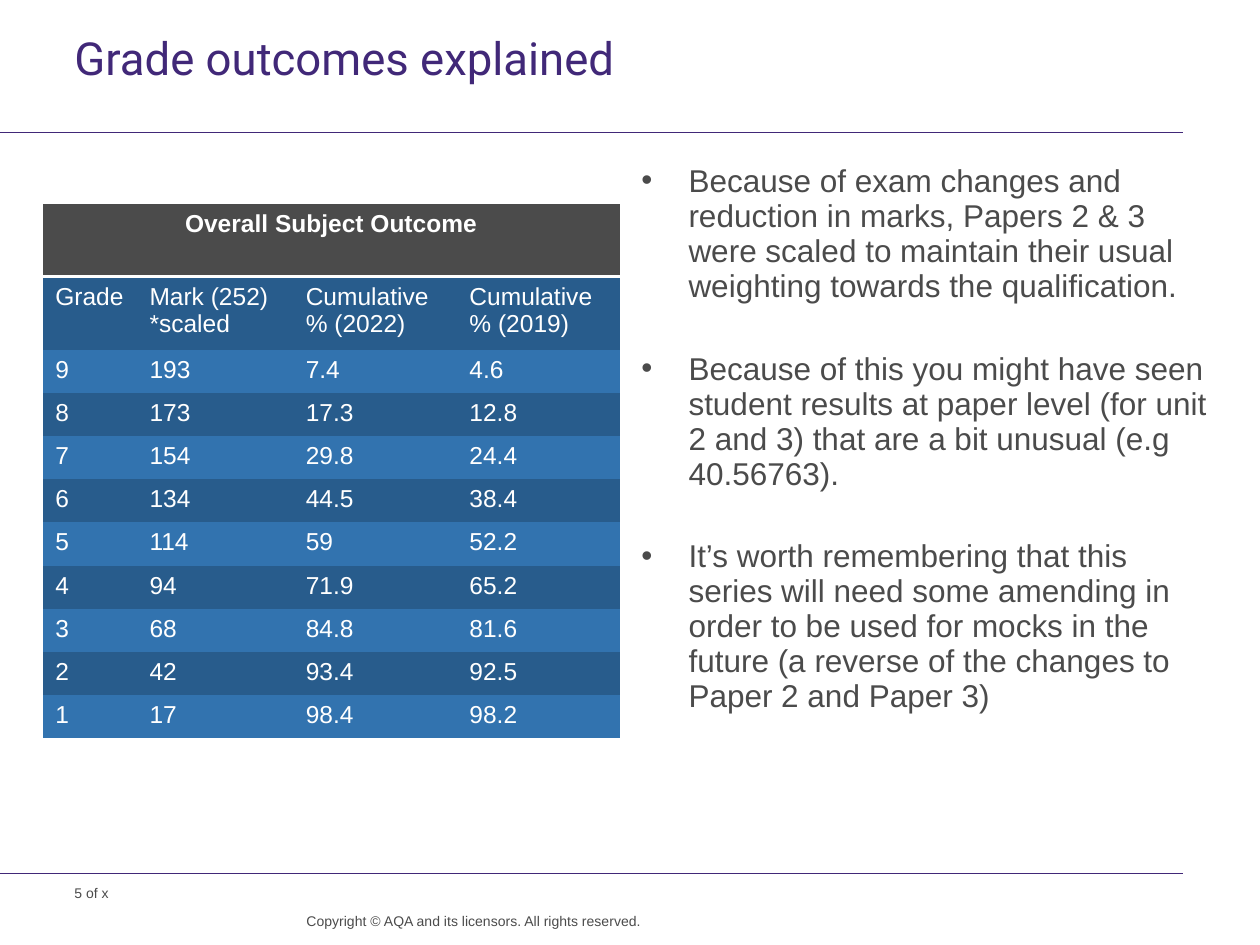
from lxml import etree
from pptx import Presentation
from pptx.dml.color import RGBColor
from pptx.enum.shapes import MSO_CONNECTOR
from pptx.enum.text import MSO_ANCHOR, MSO_AUTO_SIZE, PP_ALIGN
from pptx.oxml import parse_xml
from pptx.oxml.ns import nsdecls, qn
from pptx.util import Cm, Pt

LEFT, CENTER, RIGHT = PP_ALIGN.LEFT, PP_ALIGN.CENTER, PP_ALIGN.RIGHT
TOP = MSO_ANCHOR.TOP
FIXED = MSO_AUTO_SIZE.NONE
STRAIGHT = MSO_CONNECTOR.STRAIGHT

PURPLE, GREY, WHITE = "412878", "4B4B4B", "FFFFFF"
BANDS = "285C8C", "3273AF"
NO_STYLE = "{2D5ABB26-0587-4C30-8999-92F81FD0307C}"
HEADING = "Overall Subject Outcome"
GRADES = [
    ("Grade", "Mark (252) *scaled", "Cumulative % (2022)", "Cumulative % (2019)"),
    ("9", "193", "7.4", "4.6"),
    ("8", "173", "17.3", "12.8"),
    ("7", "154", "29.8", "24.4"),
    ("6", "134", "44.5", "38.4"),
    ("5", "114", "59", "52.2"),
    ("4", "94", "71.9", "65.2"),
    ("3", "68", "84.8", "81.6"),
    ("2", "42", "93.4", "92.5"),
    ("1", "17", "98.4", "98.2"),
]
WIDTHS = 1.9, 3.15, 3.3, 3.28
POINTS = [
    "Because of exam changes and reduction in marks, Papers 2 & 3 were scaled "
    "to maintain their usual weighting towards the qualification.",
    "Because of this you might have seen student results at paper level "
    "(for unit 2 and 3) that are a bit unusual (e.g 40.56763).",
    "It’s worth remembering that this series will need some amending in order "
    "to be used for mocks in the future (a reverse of the changes to Paper 2 "
    "and Paper 3)",
]


def color(code):
    """Turn a hex string into a colour."""
    return RGBColor.from_string(code)


def style(para, size, code, face="Arial", bold=False, align=LEFT):
    """Set the font and alignment of a paragraph."""
    para.alignment = align
    font = para.font
    font.name, font.size, font.bold = face, Pt(size), bold
    font.color.rgb = color(code)


def place(shape, left, top, width, height, inset=0):
    """Move a text shape, set its insets and return its text frame."""
    shape.left, shape.top = Cm(left), Cm(top)
    shape.width, shape.height = Cm(width), Cm(height)
    frame = shape.text_frame
    frame.word_wrap, frame.auto_size = True, FIXED
    frame.vertical_anchor = TOP
    frame.margin_left = frame.margin_top = frame.margin_bottom = 0
    frame.margin_right = Cm(inset)
    return frame


def add_rule(slide, top):
    """Draw a thin line across the slide."""
    rule = slide.shapes.add_connector(STRAIGHT, 0, Cm(top), Cm(23.85), Cm(top))
    rule.line.color.rgb = color(PURPLE)
    rule.line.width = Pt(0.6)
    etree.SubElement(rule._element.spPr, qn("a:effectLst"))


def add_note(slide, text, box, align=LEFT):
    """Add a line of small footer text."""
    frame = place(slide.shapes.add_textbox(0, 0, 0, 0), *box)
    para = frame.paragraphs[0]
    para.text = text
    style(para, 8, GREY, align=align)
    return para


def set_title(slide, text):
    """Fill the title placeholder."""
    para = place(slide.shapes.title, 1.5, 0.71, 22.35, 1.19, 0.25).paragraphs[0]
    para.text = text
    para.line_spacing = Pt(28)
    style(para, 26, PURPLE, "Roboto")


def set_list(slide, points):
    """Fill the body placeholder with bulleted points."""
    frame = place(slide.placeholders[1], 12.93, 3.3, 11.65, 13.21, 0.25)
    frame.text = "\n".join(points)
    for num, para in enumerate(frame.paragraphs):
        props = para._p.get_or_add_pPr()
        props.set("marL", str(Cm(0.95)))
        props.set("indent", str(-Cm(0.95)))
        para.line_spacing = Pt(20)
        para.space_before = Pt(27.2 if num else 0)
        style(para, 18, GREY)


def fill_cell(cell, text, fill, bold=False, align=LEFT):
    """Write and paint one table cell."""
    cell.text = text
    cell.fill.solid()
    cell.fill.fore_color.rgb = color(fill)
    style(cell.text_frame.paragraphs[0], 14, WHITE, bold=bold, align=align)


def underline(cell):
    """Give a cell a white bottom border."""
    cell._tc.get_or_add_tcPr().insert(0, parse_xml(
        f'<a:lnB {nsdecls("a")} w="{Pt(2)}"><a:solidFill>'
        f'<a:srgbClr val="{WHITE}"/></a:solidFill></a:lnB>'))


def add_grades(slide):
    """Add the grade table with its heading row."""
    count = len(GRADES) + 1
    table = slide.shapes.add_table(
        count, len(WIDTHS), Cm(0.86), Cm(4.11), Cm(sum(WIDTHS)), Cm(10.8)).table
    table._tbl.tblPr[0].text = NO_STYLE
    table.first_row = table.horz_banding = False
    for col, width in zip(table.columns, WIDTHS):
        col.width = Cm(width)
    for num, row in enumerate(table.rows):
        row.height = Cm(1.47 if num < 2 else 0.87)
    for col in range(len(WIDTHS)):
        cell = table.cell(0, col)
        fill_cell(cell, "" if col else HEADING, GREY, True, CENTER)
        underline(cell)
    table.cell(0, 0).merge(table.cell(0, len(WIDTHS) - 1))
    for num, row in enumerate(GRADES):
        for col, text in enumerate(row):
            fill_cell(table.cell(num + 1, col), text, BANDS[num % 2])


def main():
    """Build and save the slide."""
    deck = Presentation()
    deck.slide_width, deck.slide_height = Cm(25.4), Cm(19.05)
    slide = deck.slides.add_slide(deck.slide_layouts[1])
    for top in (2.67, 17.6):
        add_rule(slide, top)
    add_note(slide, "5 of x", (1.5, 17.83, 3.99, 0.33))
    note = add_note(
        slide, "Copyright © AQA and its licensors. All rights reserved.",
        (5.49, 18.39, 7.44, 0.66), RIGHT)
    note.line_spacing = Pt(10)
    add_grades(slide)
    set_title(slide, "Grade outcomes explained")
    set_list(slide, POINTS)
    deck.save("out.pptx")


if __name__ == "__main__":
    main()
